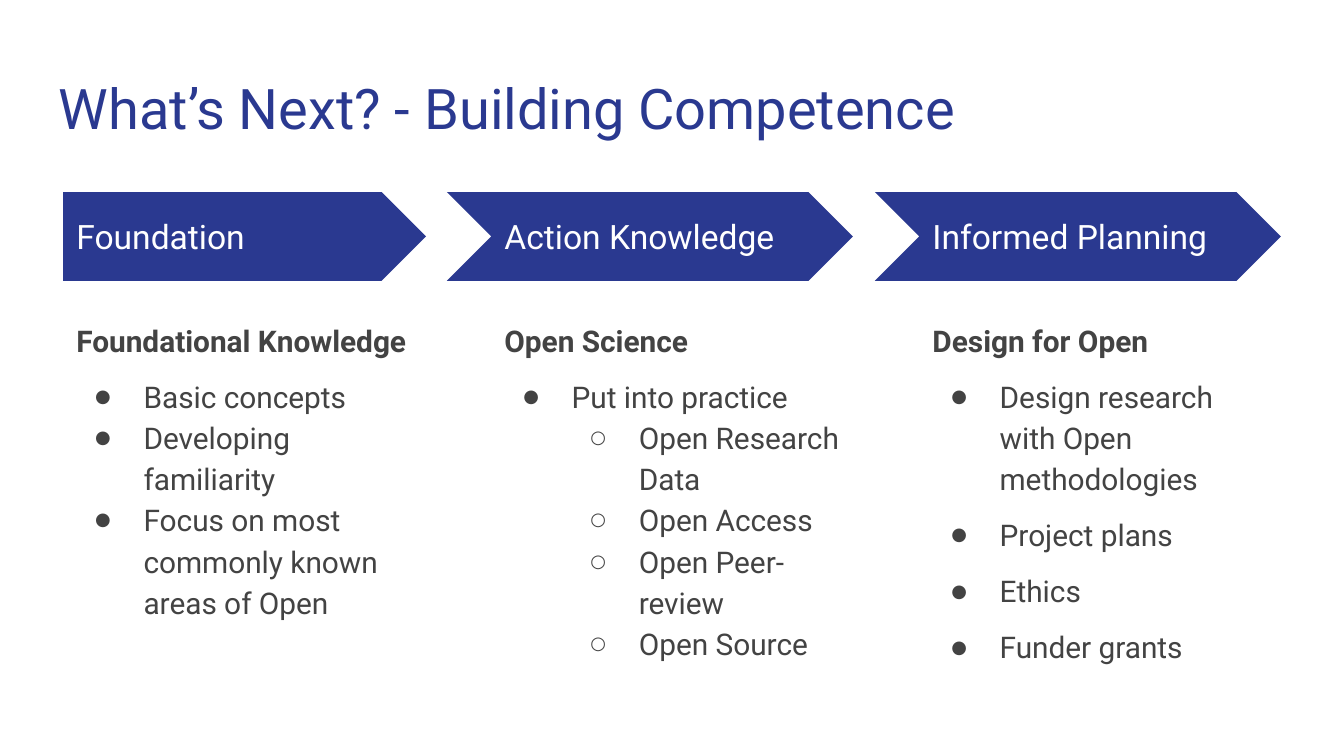
from dataclasses import dataclass

from lxml.etree import SubElement
from pptx import Presentation
from pptx.dml.color import RGBColor
from pptx.enum.shapes import MSO_SHAPE as Preset
from pptx.enum.text import MSO_ANCHOR as Anchor
from pptx.oxml.ns import qn
from pptx.slide import Slide
from pptx.util import Inches, Pt

NAVY = RGBColor(0x2A, 0x39, 0x90)
CHARCOAL = RGBColor(0x43, 0x43, 0x43)
WHITE = RGBColor(0xFF, 0xFF, 0xFF)
FONT = "Roboto"

FIRST_LEFT, LAST_LEFT, STAGE_WIDTH = 0.47, 6.84, 2.7
CHEVRON_LEAD, CHEVRON_WIDTH = 0.33, 3.02
ARROW_TOP, ARROW_HEIGHT = 1.43, 0.66
BULLETS = "●○"
BULLET_SCALE = "60000"


@dataclass(frozen=True)
class Bullet:
    text: str
    level: int = 0
    space_before: int = 0


@dataclass(frozen=True)
class Stage:
    name: str
    heading: str
    bullets: tuple[Bullet, ...]


STAGES = (
    Stage("Foundation", "Foundational Knowledge", (
        Bullet("Basic concepts", space_before=8),
        Bullet("Developing familiarity"),
        Bullet("Focus on most commonly known areas of Open"),
    )),
    Stage("Action Knowledge", "Open Science", (
        Bullet("Put into practice", space_before=8),
        Bullet("Open Research Data", level=1),
        Bullet("Open Access", level=1),
        Bullet("Open Peer-review", level=1),
        Bullet("Open Source", level=1),
    )),
    Stage("Informed Planning", "Design for Open", (
        Bullet("Design research with Open methodologies", space_before=8),
        Bullet("Project plans", space_before=8),
        Bullet("Ethics", space_before=8),
        Bullet("Funder grants", space_before=8),
    )),
)
STAGE_PITCH = (LAST_LEFT - FIRST_LEFT) / (len(STAGES) - 1)


def style(paragraph, size: int, color: RGBColor, bold: bool = False) -> None:
    for run in paragraph.runs:
        run.font.name = FONT
        run.font.size = Pt(size)
        run.font.color.rgb = color
        run.font.bold = bold


def add_text(slide: Slide, left: float, top: float, width: float, height: float,
             lines: list[str], anchor: Anchor = Anchor.TOP):
    """Add a wrapped text box with even insets and return its paragraphs."""
    frame = slide.shapes.add_textbox(
        Inches(left), Inches(top), Inches(width), Inches(height)).text_frame
    frame.word_wrap = True
    frame.vertical_anchor = anchor
    frame.margin_left = frame.margin_right = Inches(0.1)
    frame.margin_top = frame.margin_bottom = Inches(0.1)
    frame.text = "\n".join(lines)
    return frame.paragraphs


def set_bullet(paragraph, bullet: Bullet) -> None:
    paragraph.level = bullet.level
    paragraph.space_before = Pt(bullet.space_before)
    properties = paragraph._p.get_or_add_pPr()
    properties.set("marL", str(Inches(0.5 * (bullet.level + 1))))
    properties.set("indent", str(Inches(-0.36)))
    bullet_color = SubElement(properties, qn("a:buClr"))
    SubElement(bullet_color, qn("a:srgbClr"), val=str(CHARCOAL))
    SubElement(properties, qn("a:buSzPct"), val=BULLET_SCALE)
    SubElement(properties, qn("a:buFont"), typeface=FONT)
    SubElement(properties, qn("a:buChar"), char=BULLETS[bullet.level])


def add_arrow(slide: Slide, preset: Preset, left: float, width: float) -> None:
    arrow = slide.shapes.add_shape(
        preset, Inches(left), Inches(ARROW_TOP), Inches(width), Inches(ARROW_HEIGHT))
    arrow.adjustments[0] = 0.5
    arrow.shadow.inherit = False
    arrow.fill.solid()
    arrow.fill.fore_color.rgb = NAVY
    arrow.line.fill.background()


def add_stage(slide: Slide, stage: Stage, index: int) -> None:
    left = FIRST_LEFT + index * STAGE_PITCH
    if index == 0:
        add_arrow(slide, Preset.PENTAGON, left, STAGE_WIDTH)
    else:
        add_arrow(slide, Preset.CHEVRON, left - CHEVRON_LEAD, CHEVRON_WIDTH)

    name, = add_text(slide, left, 1.59, 2.47, 0.34, [stage.name], Anchor.MIDDLE)
    style(name, 18, WHITE)

    lines = [stage.heading, *(bullet.text for bullet in stage.bullets)]
    heading, *items = add_text(slide, left, 2.26, STAGE_WIDTH, 2.9, lines)
    heading.line_spacing = 1.15
    style(heading, 16, CHARCOAL, bold=True)
    for item, bullet in zip(items, stage.bullets):
        item.line_spacing = 1.15
        set_bullet(item, bullet)
        style(item, 16, CHARCOAL)


def main() -> None:
    deck = Presentation()
    deck.slide_width = Inches(10)
    deck.slide_height = Inches(10 * 9 / 16)
    slide = deck.slides.add_slide(deck.slide_layouts[6])

    title, = add_text(slide, 0.34, 0.45, 9.32, 0.66, ["What’s Next? - Building Competence"])
    style(title, 30, NAVY)
    for index, stage in enumerate(STAGES):
        add_stage(slide, stage, index)

    deck.save("out.pptx")


if __name__ == "__main__":
    main()
